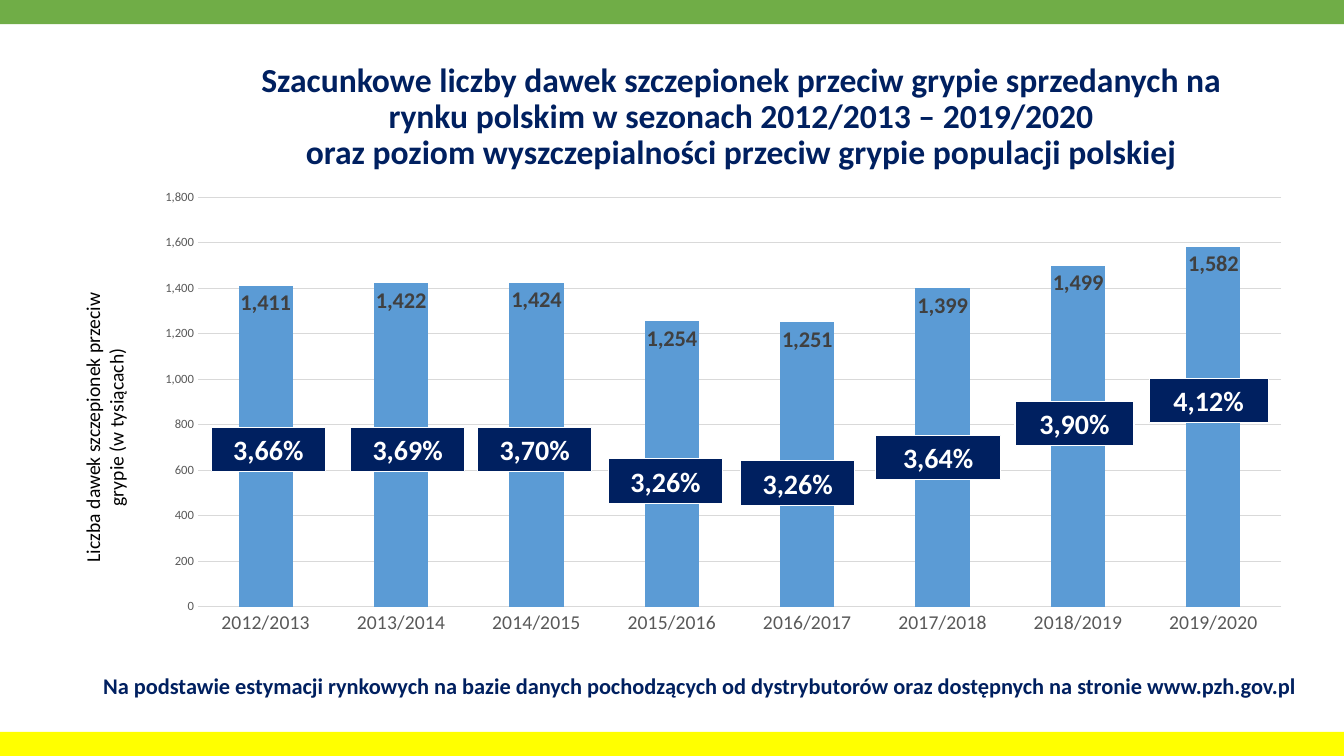
from pptx import Presentation
from pptx.chart.data import CategoryChartData
from pptx.dml.color import RGBColor
from pptx.enum.chart import XL_CHART_TYPE as Kind, XL_LABEL_POSITION as Spot, XL_TICK_MARK as Tick
from pptx.enum.shapes import MSO_SHAPE as Form
from pptx.enum.text import MSO_ANCHOR as Anchor, PP_ALIGN as Align
from pptx.util import Cm, Pt

FACE = "Calibri"
NAVY, WHITE, GREY, RULE = "002060", "FFFFFF", "595959", "D9D9D9"
WIDE, HIGH, BAND = 33.87, 19.05, 0.61
BANDS = [(0, "70AD47"), (HIGH - BAND, "FFFF00")]
TITLE = (
    "Szacunkowe liczby dawek szczepionek przeciw grypie sprzedanych na "
    "rynku polskim w sezonach 2012/2013 – 2019/2020\n"
    "oraz poziom wyszczepialności przeciw grypie populacji polskiej"
)
SIDE = "Liczba dawek szczepionek przeciw grypie (w tysiącach)"
NOTE = (
    "Na podstawie estymacji rynkowych na bazie danych pochodzących od "
    "dystrybutorów oraz dostępnych na stronie www.pzh.gov.pl"
)
DOSES = [1411, 1422, 1424, 1254, 1251, 1399, 1499, 1582]
YEARS = [f"{year}/{year + 1}" for year in range(2012, 2012 + len(DOSES))]
RATES = [
    ("3,66%", 5.33, 10.77, 2.87),
    ("3,69%", 8.84, 10.77, 2.87),
    ("3,70%", 12.04, 10.77, 2.87),
    ("3,26%", 15.34, 11.56, 2.87),
    ("3,26%", 18.67, 11.61, 2.87),
    ("3,64%", 22.07, 10.97, 3.15),
    ("3,90%", 25.58, 10.11, 3),
    ("4,12%", 28.96, 9.53, 3),
]
TALL = 1.12


def hue(code):
    return RGBColor.from_string(code)


def style(font, size, color, bold=False):
    font.name, font.size, font.bold = FACE, Pt(size), bold
    font.color.rgb = hue(color)


def stroke(line, color, width=0.75):
    line.color.rgb = hue(color)
    line.width = Pt(width)


def write(shape, text, size=16, color=NAVY, bold=True, anchor=Anchor.MIDDLE, space=1.0):
    frame = shape.text_frame
    frame.word_wrap = True
    frame.vertical_anchor = anchor
    para = frame.paragraphs[0]
    para.alignment = Align.CENTER
    para.line_spacing = space
    for index, row in enumerate(text.split("\n")):
        if index:
            para.add_line_break()
        run = para.add_run()
        run.text = row
        style(run.font, size, color, bold)


def block(slide, box, fill, edge=None, width=0.75):
    shape = slide.shapes.add_shape(Form.RECTANGLE, *map(Cm, box))
    shape.shadow.inherit = False
    shape.fill.solid()
    shape.fill.fore_color.rgb = hue(fill)
    if edge:
        stroke(shape.line, edge, width)
    else:
        shape.line.fill.background()
    return shape


def label(slide, box, text, **look):
    write(slide.shapes.add_textbox(*map(Cm, box)), text, **look)


def graph(slide, box):
    data = CategoryChartData(number_format="#,##0")
    data.categories = YEARS
    data.add_series("Series 1", DOSES)
    chart = slide.shapes.add_chart(Kind.COLUMN_STACKED, *map(Cm, box), data).chart
    chart.has_legend = chart.has_title = False
    style(chart.font, 10, "000000")
    plot = chart.plots[0]
    plot.gap_width, plot.overlap, plot.vary_by_categories = 150, 100, False
    bars = plot.series[0]
    bars.format.fill.solid()
    bars.format.fill.fore_color.rgb = hue("5B9BD5")
    tags = bars.data_labels
    tags.show_value = True
    tags.position = Spot.INSIDE_END
    tags.number_format, tags.number_format_is_linked = "#,##0", False
    style(tags.font, 16, "404040", True)
    for axis, size in ((chart.category_axis, 14), (chart.value_axis, 9)):
        axis.major_tick_mark = axis.minor_tick_mark = Tick.NONE
        style(axis.tick_labels.font, size, GREY)
    stroke(chart.category_axis.format.line, RULE)
    scale = chart.value_axis
    scale.minimum_scale, scale.maximum_scale, scale.major_unit = 0, 1800, 200
    scale.format.line.fill.background()
    stroke(scale.major_gridlines.format.line, RULE)
    scale.tick_labels.number_format = "#,##0"
    scale.tick_labels.number_format_is_linked = False


def main():
    deck = Presentation()
    deck.slide_width, deck.slide_height = Cm(WIDE), Cm(HIGH)
    slide = deck.slides.add_slide(deck.slide_layouts[6])
    for top, color in BANDS:
        block(slide, (0, top, WIDE, BAND), color)
    graph(slide, (3.58, 4.55, 29.29, 11.68))
    label(slide, (5.94, 1.37, 25.48, 3.18), TITLE, size=24, space=0.9)
    side = block(slide, (2.03, 6.68, 1.19, 8.18), WHITE, WHITE, 1)
    write(side, SIDE, size=14, color="000000", bold=False)
    side.text_frame._txBody.bodyPr.set("vert", "vert270")
    label(slide, (2.16, 16.1, 30.96, 1.63), NOTE, anchor=Anchor.BOTTOM)
    for text, left, top, width in RATES:
        badge = block(slide, (left, top, width, TALL), NAVY, WHITE)
        write(badge, text, size=20, color=WHITE)
    deck.save("out.pptx")


if __name__ == "__main__":
    main()
